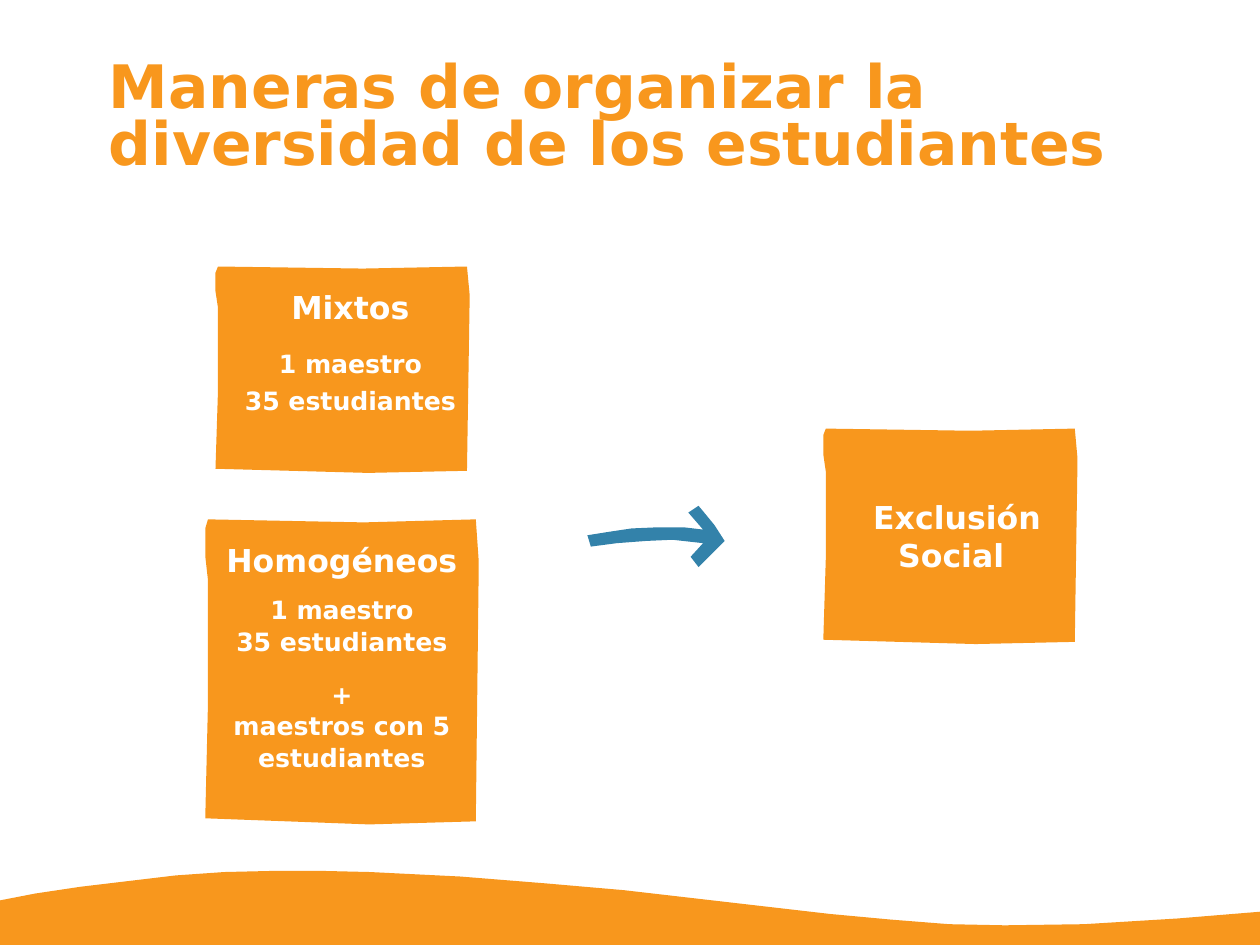
from pptx import Presentation
from pptx.dml.color import RGBColor
from pptx.enum.text import MSO_ANCHOR, MSO_AUTO_SIZE, PP_ALIGN
from pptx.util import Inches, Pt

ORANGE = RGBColor(0xF8, 0x97, 0x1D)
BLUE = RGBColor(0x33, 0x82, 0xAA)
WHITE = RGBColor(0xFF, 0xFF, 0xFF)
FONT = "DejaVu Sans"

prs = Presentation()
prs.slide_width, prs.slide_height = Inches(11.11), Inches(8.33)
s = prs.slides.add_slide(prs.slide_layouts[5])

# Grid of 100 columns by 100 rows
COL, ROW = prs.slide_width / 100, prs.slide_height / 100


def draw_outline(points, color):
    """Draw a filled outline from (column, row) points."""
    pts = [(round(x * COL), round(y * ROW)) for x, y in points]
    builder = s.shapes.build_freeform(*pts[0])
    builder.add_line_segments(pts[1:], close=True)
    sp = builder.convert_to_shape()
    sp.shadow.inherit = False
    sp.fill.solid()
    sp.fill.fore_color.rgb = color
    sp.line.fill.background()


def write(sp, area, lines, color):
    """Place sp on the grid and fill it with (text, size, paragraph format)."""
    x, y, w, h = area
    sp.left, sp.top = round(x * COL), round(y * ROW)
    sp.width, sp.height = round(w * COL), round(h * ROW)
    tf = sp.text_frame
    frame = {"word_wrap": True, "auto_size": MSO_AUTO_SIZE.NONE,
             "vertical_anchor": MSO_ANCHOR.TOP, "margin_left": 0,
             "margin_right": 0, "margin_top": 0, "margin_bottom": 0}
    for name, value in frame.items():
        setattr(tf, name, value)
    for i, (text, size, fmt) in enumerate(lines):
        p = tf.add_paragraph() if i else tf.paragraphs[0]
        for name, value in fmt.items():
            setattr(p, name, value)
        r = p.add_run()
        r.text = text
        for name, value in {"name": FONT, "size": Pt(size), "bold": True}.items():
            setattr(r.font, name, value)
        r.font.color.rgb = color


# Title
write(s.shapes.title, (8.64, 6.72, 82.71, 12),
      [("Maneras de organizar la diversidad de los estudiantes", 38,
        {"alignment": PP_ALIGN.LEFT, "line_spacing": 0.79})], ORANGE)

# Wave along the bottom edge
draw_outline([
    (0, 95.28), (2.79, 94.56), (6.39, 93.84), (10.17, 93.24), (13.95, 92.64),
    (17.82, 92.28), (21.69, 92.16), (25.56, 92.16), (29.34, 92.28),
    (36.54, 92.76), (43.29, 93.48), (49.5, 94.2), (65.88, 96.72),
    (70.74, 97.32), (75.33, 97.8), (79.74, 97.92), (86.04, 97.8),
    (93.42, 97.2), (100, 96.48), (100, 100), (0, 100)], ORANGE)

# Arrow from the groups to the result
draw_outline([
    (46.62, 56.64), (48.33, 56.28), (50.13, 55.92), (52.2, 55.8),
    (54.27, 55.8), (55.8, 56.04), (54.63, 54.24), (55.44, 53.52),
    (55.89, 54.24), (56.7, 55.56), (57.51, 57.24), (56.7, 58.32),
    (55.44, 60), (54.81, 58.92), (55.8, 57.48), (53.37, 57.12),
    (51.3, 57.24), (48.96, 57.48), (46.89, 57.84)], BLUE)

# Hand-cut boxes: one outline in shares of the box, stretched to each area
CUT = [(0.01, 0), (0, 0.03), (0, 0.12), (0.01, 0.2), (0.01, 0.6), (0, 0.98),
       (0.6, 1), (0.99, 0.99), (1, 0.2), (1, 0.13), (0.99, 0), (0.58, 0.01)]
boxes = [(17.1, 28.2, 20.16, 21.84),
         (16.29, 54.96, 21.69, 32.28),
         (65.34, 45.36, 20.16, 22.8)]
for x, y, w, h in boxes:
    draw_outline([(x + fx * w, y + fy * h) for fx, fy in CUT], ORANGE)

# Box texts
CENTER = {"alignment": PP_ALIGN.CENTER}
texts = [
    ((19.08, 30.48, 17.46, 16.56),
     [("Mixtos", 20, CENTER),
      ("1 maestro", 16, CENTER | {"space_before": Pt(14)}),
      ("35 estudiantes", 16, CENTER | {"space_before": Pt(4.8)})]),
    ((17.91, 57.24, 18.45, 12.24),
     [("Homogéneos", 20, CENTER),
      ("1 maestro", 16, CENTER | {"space_before": Pt(10)}),
      ("35 estudiantes", 16, CENTER | {"space_before": Pt(0.8)})]),
    ((17.73, 71.88, 18.81, 9.96),
     [("+", 16, CENTER),
      ("maestros con 5 estudiantes", 16, CENTER | {"line_spacing": 1.04})]),
    ((69.12, 52.68, 13.86, 10.32),
     [("Exclusión Social", 20, {"alignment": PP_ALIGN.LEFT})]),
]
for area, lines in texts:
    sp = s.shapes.add_textbox(0, 0, 0, 0)
    write(sp, area, lines, WHITE)

# Hanging indent of the result text
pPr = sp.text_frame.paragraphs[0]._p.get_or_add_pPr()
pPr.set("marL", str(Inches(0.24)))
pPr.set("indent", str(Inches(-0.22)))

prs.save("out.pptx")
